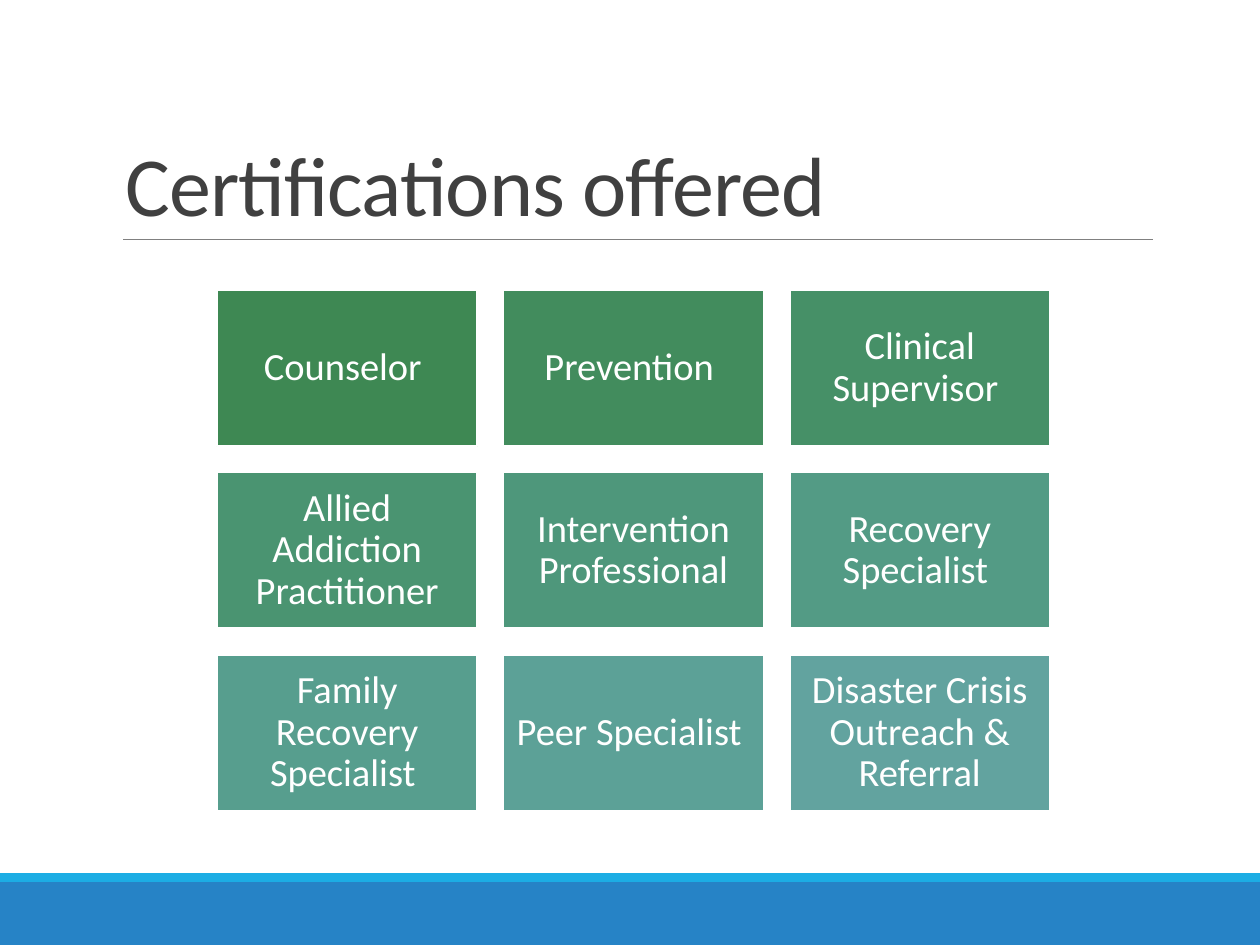
from dataclasses import dataclass

from lxml import etree
from pptx import Presentation
from pptx import util as u
from pptx.dml.color import RGBColor
from pptx.enum import shapes, text
from pptx.oxml.ns import qn


@dataclass(frozen=True)
class Theme:
    font: str = "Calibri"
    title_size: float = 48
    card_size: float = 22
    title_color: str = "404040"
    card_text: str = "FFFFFF"
    card_border: str = "FFFFFF"
    rule: str = "808080"
    footer: str = "2683C6"
    footer_accent: str = "1CADE4"


CARDS = [
    ("Counselor ", "3E8853"),
    ("Prevention ", "428C5D"),
    ("Clinical Supervisor ", "469067"),
    ("Allied Addiction Practitioner", "4A9471"),
    ("Intervention Professional", "4E977B"),
    ("Recovery Specialist ", "539B85"),
    ("Family Recovery Specialist ", "579E8E"),
    ("Peer Specialist ", "5CA197"),
    ("Disaster Crisis Outreach & Referral", "62A39F"),
]


class SlideBuilder:
    """Draws styled elements on one slide, with lengths in points."""

    def __init__(self, slide, theme):
        self.slide = slide
        self.theme = theme

    def band(self, left, top, width, height, fill):
        shape = self.slide.shapes.add_shape(
            shapes.MSO_SHAPE.RECTANGLE,
            u.Pt(left), u.Pt(top), u.Pt(width), u.Pt(height))
        shape.shadow.inherit = False
        shape.fill.solid()
        shape.fill.fore_color.rgb = RGBColor.from_string(fill)
        shape.line.fill.background()
        return shape

    def rule(self, left, right, y):
        line = self.slide.shapes.add_connector(
            shapes.MSO_CONNECTOR.STRAIGHT, u.Pt(left), u.Pt(y), u.Pt(right), u.Pt(y))
        line.line.color.rgb = RGBColor.from_string(self.theme.rule)
        line.line.width = u.Pt(0.5)
        etree.SubElement(line._element.spPr, qn("a:effectLst"))

    def set_text(self, shape, wording, size, color, spacing):
        frame = shape.text_frame
        frame.word_wrap = True
        paragraph = frame.paragraphs[0]
        paragraph.text = wording
        paragraph.line_spacing = spacing
        paragraph.font.name = self.theme.font
        paragraph.font.size = u.Pt(size)
        paragraph.font.color.rgb = RGBColor.from_string(color)
        return frame, paragraph

    def title(self, left, top, width, height, wording):
        box = self.slide.shapes.add_textbox(
            u.Pt(left), u.Pt(top), u.Pt(width), u.Pt(height))
        frame, paragraph = self.set_text(
            box, wording, self.theme.title_size, self.theme.title_color, 0.85)
        frame.vertical_anchor = text.MSO_ANCHOR.BOTTOM
        paragraph.runs[0]._r.get_or_add_rPr().set("spc", "-50")

    def card(self, left, top, width, height, wording, fill):
        shape = self.band(left, top, width, height, fill)
        shape.line.color.rgb = RGBColor.from_string(self.theme.card_border)
        shape.line.width = u.Pt(1.25)
        frame, paragraph = self.set_text(
            shape, wording, self.theme.card_size, self.theme.card_text, 0.9)
        frame.margin_left = frame.margin_right = u.Pt(6.6)
        frame.margin_top = frame.margin_bottom = u.Pt(6.6)
        frame.vertical_anchor = text.MSO_ANCHOR.MIDDLE
        paragraph.alignment = text.PP_ALIGN.CENTER

    def card_grid(self, left, top, width, height, gap, columns, cards):
        for index, (wording, fill) in enumerate(cards):
            row, column = divmod(index, columns)
            self.card(left + column * (width + gap), top + row * (height + gap),
                      width, height, wording, fill)


def main():
    presentation = Presentation()
    presentation.slide_width = u.Pt(720)
    presentation.slide_height = u.Pt(540)
    slide = presentation.slides.add_slide(presentation.slide_layouts[6])
    theme = Theme()
    builder = SlideBuilder(slide, theme)
    builder.band(0, 504, 720, 36, theme.footer)
    builder.band(0, 499, 720, 5, theme.footer_accent)
    builder.rule(70.4, 658.8, 136.8)
    builder.title(64.8, 22.6, 594, 114.2, "Certifications offered")
    builder.card_grid(124, 165.8, 148.8, 89.3, 14.8, 3, CARDS)
    presentation.save("out.pptx")


if __name__ == "__main__":
    main()
